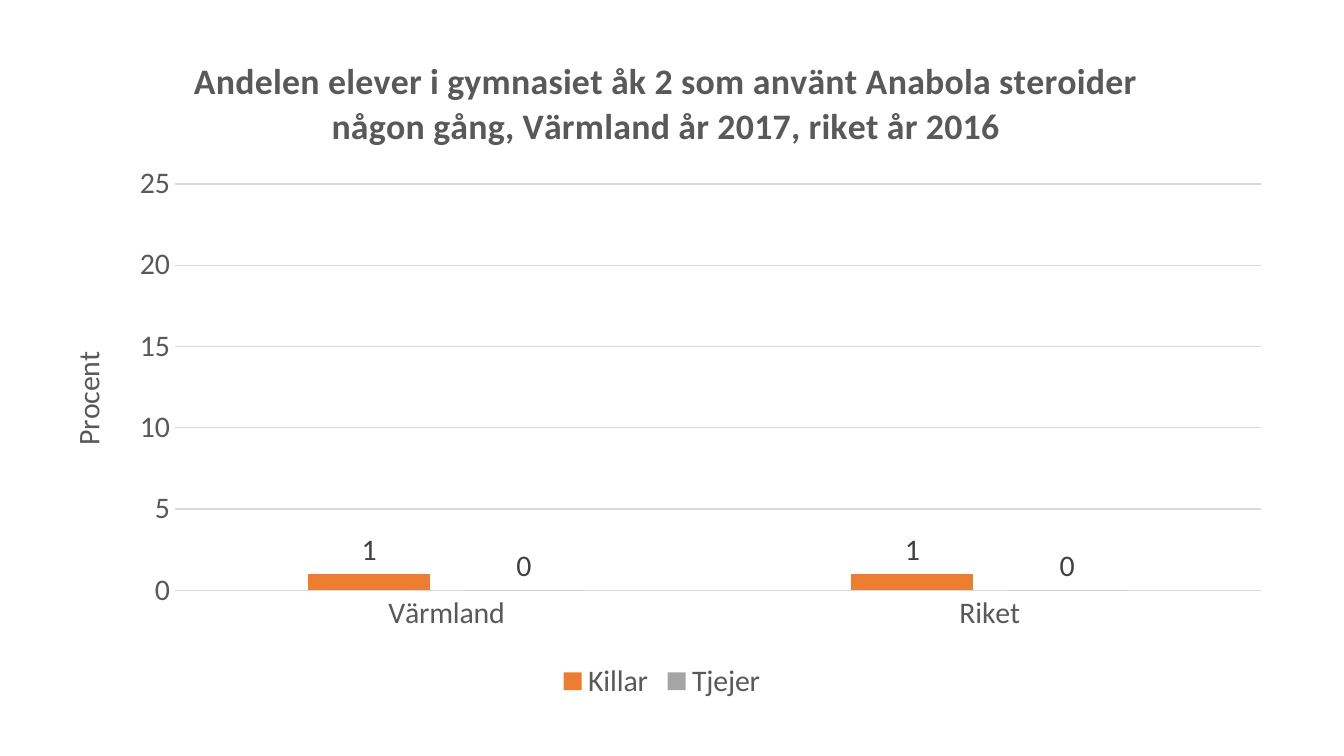
from dataclasses import dataclass

from pptx import Presentation
from pptx.chart.data import CategoryChartData
from pptx.dml.color import RGBColor
from pptx.enum.chart import (
    XL_CHART_TYPE, XL_LABEL_POSITION, XL_LEGEND_POSITION, XL_TICK_MARK)
from pptx.oxml import parse_xml
from pptx.oxml.ns import nsdecls
from pptx.util import Inches, Pt


@dataclass(frozen=True)
class Theme:
    font: str = "Calibri"
    text: str = "595959"
    label: str = "404040"
    rule: str = "D9D9D9"
    boys: str = "ED7D31"
    girls: str = "A5A5A5"
    body_size: float = 16
    title_size: float = 19.2
    rule_width: float = 0.75


THEME = Theme()


def style_font(font, color=THEME.text, size=THEME.body_size, bold=False):
    font.name = THEME.font
    font.size = Pt(size)
    font.bold = bold
    font.color.rgb = RGBColor.from_string(color)


def style_rule(line):
    line.color.rgb = RGBColor.from_string(THEME.rule)
    line.width = Pt(THEME.rule_width)


def manual_layout(x, y, width=None, height=None):
    """Return a layout in fractions of the chart; a size applies to the inner plot."""
    values = {"x": x, "y": y}
    target = ""
    if width is not None:
        values.update(w=width, h=height)
        target = '<c:layoutTarget val="inner"/>'
    modes = "".join(f'<c:{name}Mode val="edge"/>' for name in "xy")
    places = "".join(f'<c:{name} val="{value}"/>' for name, value in values.items())
    return parse_xml(
        f'<c:layout {nsdecls("c")}><c:manualLayout>{target}{modes}{places}'
        "</c:manualLayout></c:layout>")


def add_title(title, text, x, y, size=THEME.body_size, bold=False):
    """Fill a chart or axis title and fix its place."""
    paragraph = title.text_frame.paragraphs[0]
    paragraph.text = text
    style_font(paragraph.font, size=size, bold=bold)
    element = title._element
    for layout in element.findall("{*}layout"):
        element.remove(layout)
    element.find("{*}tx").addnext(manual_layout(x, y))


def place_plot(chart, x, y, width, height):
    plot_area = chart._chartSpace.chart.plotArea
    for layout in plot_area.findall("{*}layout"):
        plot_area.remove(layout)
    plot_area.insert(0, manual_layout(x, y, width, height))


def style_axes(chart):
    for axis in (chart.category_axis, chart.value_axis):
        axis.major_tick_mark = axis.minor_tick_mark = XL_TICK_MARK.NONE
        style_font(axis.tick_labels.font)
    style_rule(chart.category_axis.format.line)

    value_axis = chart.value_axis
    value_axis.minimum_scale = 0
    value_axis.maximum_scale = 25
    value_axis.major_unit = 5
    value_axis.tick_labels.number_format = "0"
    value_axis.tick_labels.number_format_is_linked = False
    value_axis.format.line.fill.background()
    style_rule(value_axis.major_gridlines.format.line)


def style_series(series, color):
    series.format.fill.solid()
    series.format.fill.fore_color.rgb = RGBColor.from_string(color)
    series.invert_if_negative = False
    labels = series.data_labels
    labels.show_value = True
    labels.position = XL_LABEL_POSITION.OUTSIDE_END
    labels.number_format = "0"
    labels.number_format_is_linked = False
    style_font(labels.font, THEME.label)


def add_steroid_chart(slide):
    data = CategoryChartData(number_format="0")
    data.categories = ["Värmland", "Riket"]
    data.add_series("Killar", [1, 1])
    data.add_series("Tjejer", [0, 0])
    chart = slide.shapes.add_chart(
        XL_CHART_TYPE.COLUMN_CLUSTERED,
        Inches(0.28), Inches(0.21), Inches(9.29), Inches(5.04), data).chart
    chart.font.name = THEME.font
    chart.font.size = Pt(THEME.body_size)

    add_title(
        chart.chart_title,
        "Andelen elever i gymnasiet åk 2 som använt Anabola steroider "
        "någon gång, Värmland år 2017, riket år 2016",
        0.12, 0.03, THEME.title_size, bold=True)
    add_title(chart.value_axis.axis_title, "Procent", 0.02, 0.47)
    style_axes(chart)
    place_plot(chart, 0.11, 0.23, 0.87, 0.6)

    plot = chart.plots[0]
    plot.gap_width = 219
    plot.overlap = -27
    plot.vary_by_categories = False
    for series, color in zip(plot.series, (THEME.boys, THEME.girls)):
        style_series(series, color)

    chart.has_legend = True
    chart.legend.position = XL_LEGEND_POSITION.BOTTOM
    chart.legend.include_in_layout = False
    style_font(chart.legend.font)


def main():
    presentation = Presentation()
    presentation.slide_width = Inches(10)
    presentation.slide_height = Inches(10 * 9 / 16)
    slide = presentation.slides.add_slide(presentation.slide_layouts[6])
    add_steroid_chart(slide)
    presentation.save("out.pptx")


if __name__ == "__main__":
    main()
